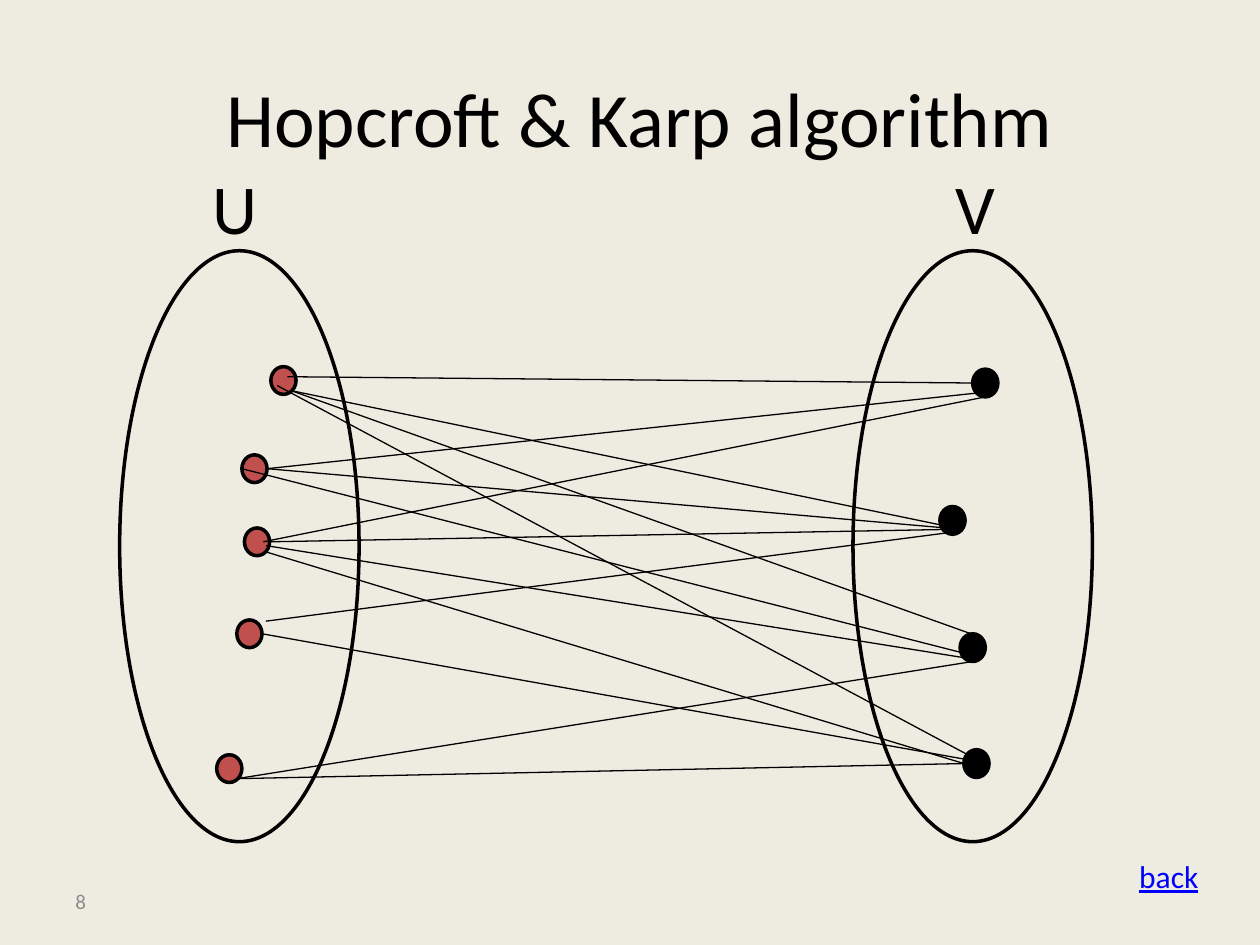
from dataclasses import dataclass

from lxml import etree
from pptx import Presentation
from pptx import util as u
from pptx.dml.color import RGBColor
from pptx.enum import shapes, text
from pptx.oxml import ns


@dataclass(frozen=True)
class Theme:
    font: str = "Calibri"
    paper: str = "EEECE1"
    ink: str = "000000"
    free_node: str = "C0504D"
    muted: str = "8C8C8C"
    link: str = "0000FF"
    title: int = 44
    set_name: int = 40
    link_size: int = 18
    number: int = 12
    outline: float = 2
    edge: float = 0.75


T = Theme()
LEFT, CENTER, RIGHT = text.PP_ALIGN.LEFT, text.PP_ALIGN.CENTER, text.PP_ALIGN.RIGHT

# The slide is a grid of 100 columns by 75 rows, one cell being 0.1 inch
COLS, ROWS = 100, 75
CELL = u.Inches(0.1)

SET_TOP, SET_W, SET_H = 19.9, 19, 46.9
SET_LEFTS = (9.5, 67.7)
NODE_W, NODE_H = 2, 2.2
U_NODES = [(21.5, 29.1), (19.2, 36.1), (19.4, 41.9), (18.8, 49.2), (17.2, 59.9)]
V_NODES = [(77.2, 29.3), (74.6, 40.2), (76.2, 50.3), (76.5, 59.5)]

# Each edge runs from a point at a U node to a point at a V node
EDGES = [
    # first U node
    ((22.8, 29.9), (77.2, 30.4)), ((23.1, 31), (76.3, 42)),
    ((23.1, 31), (77.9, 50.6)), ((22, 30.6), (76.8, 59.9)),
    # second
    ((21.2, 37.2), (77.5, 31.2)), ((21.2, 37.2), (76.2, 42)),
    ((19.2, 37.2), (77.9, 52.2)),
    # third
    ((20.9, 43), (78.2, 31.5)), ((21.4, 43), (76.2, 42)),
    ((21.1, 43.3), (76.5, 52.2)), ((21.1, 43.8), (76.5, 60.6)),
    # fourth
    ((21.1, 49.3), (75.1, 42.3)), ((20.8, 50.3), (78.5, 60.6)),
    # fifth
    ((18.8, 61.8), (77.2, 52.5)), ((18.8, 61.8), (76.5, 60.6)),
]


def cells(*values):
    return [round(v * CELL) for v in values]


def rgb(value):
    return RGBColor.from_string(value)


def add_oval(slide, kind, box, fill=None):
    sp = slide.shapes.add_shape(kind, *cells(*box))
    sp.shadow.inherit = False
    if fill:
        sp.fill.solid()
        sp.fill.fore_color.rgb = rgb(fill)
    else:
        sp.fill.background()
    sp.line.color.rgb = rgb(T.ink)
    sp.line.width = u.Pt(T.outline)


def add_edge(slide, start, end):
    line = slide.shapes.add_connector(
        shapes.MSO_CONNECTOR.STRAIGHT, *cells(*start, *end))
    line.line.color.rgb = rgb(T.ink)
    line.line.width = u.Pt(T.edge)
    etree.SubElement(line._element.spPr, ns.qn("a:effectLst"))


def add_label(slide, words, box, size, align, color=T.ink, middle=False,
              underline=None, rtl=False):
    tf = slide.shapes.add_textbox(*cells(*box)).text_frame
    tf.word_wrap = True
    tf.vertical_anchor = text.MSO_ANCHOR.MIDDLE if middle else text.MSO_ANCHOR.TOP
    p = tf.paragraphs[0]
    p.alignment = align
    if rtl:
        p._p.get_or_add_pPr().set("rtl", "1")
    r = p.add_run()
    r.text = words
    r.font.name = T.font
    r.font.size = u.Pt(size)
    r.font.color.rgb = rgb(color)
    r.font.underline = underline


def main():
    prs = Presentation()
    prs.slide_width, prs.slide_height = COLS * CELL, ROWS * CELL
    slide = prs.slides.add_slide(prs.slide_layouts[6])
    slide.background.fill.solid()
    slide.background.fill.fore_color.rgb = rgb(T.paper)

    # Title
    add_label(slide, "Hopcroft & Karp algorithm ", (5, 3, 90, 12.5), T.title,
              CENTER, middle=True, rtl=True)

    # The two vertex sets
    for left in SET_LEFTS:
        add_oval(slide, shapes.MSO_SHAPE.OVAL, (left, SET_TOP, SET_W, SET_H))

    # Vertices
    for nodes, fill in ((U_NODES, T.free_node), (V_NODES, T.ink)):
        for left, top in nodes:
            add_oval(slide, shapes.MSO_SHAPE.FLOWCHART_CONNECTOR,
                     (left, top, NODE_W, NODE_H), fill)

    # Edges
    for start, end in EDGES:
        add_edge(slide, start, end)

    # Set names
    for name, left in (("U", 15.1), ("V", 73.7)):
        add_label(slide, name, (left, 12.6, 6.3, 7.7), T.set_name, RIGHT)

    # Footer
    add_label(slide, "8", (5, 69.5, 23.3, 4), T.number, LEFT, T.muted, middle=True)
    add_label(slide, "back", (88.6, 67.5, 7.5, 4), T.link_size, RIGHT, T.link,
              underline=True)

    prs.save("out.pptx")


if __name__ == "__main__":
    main()
